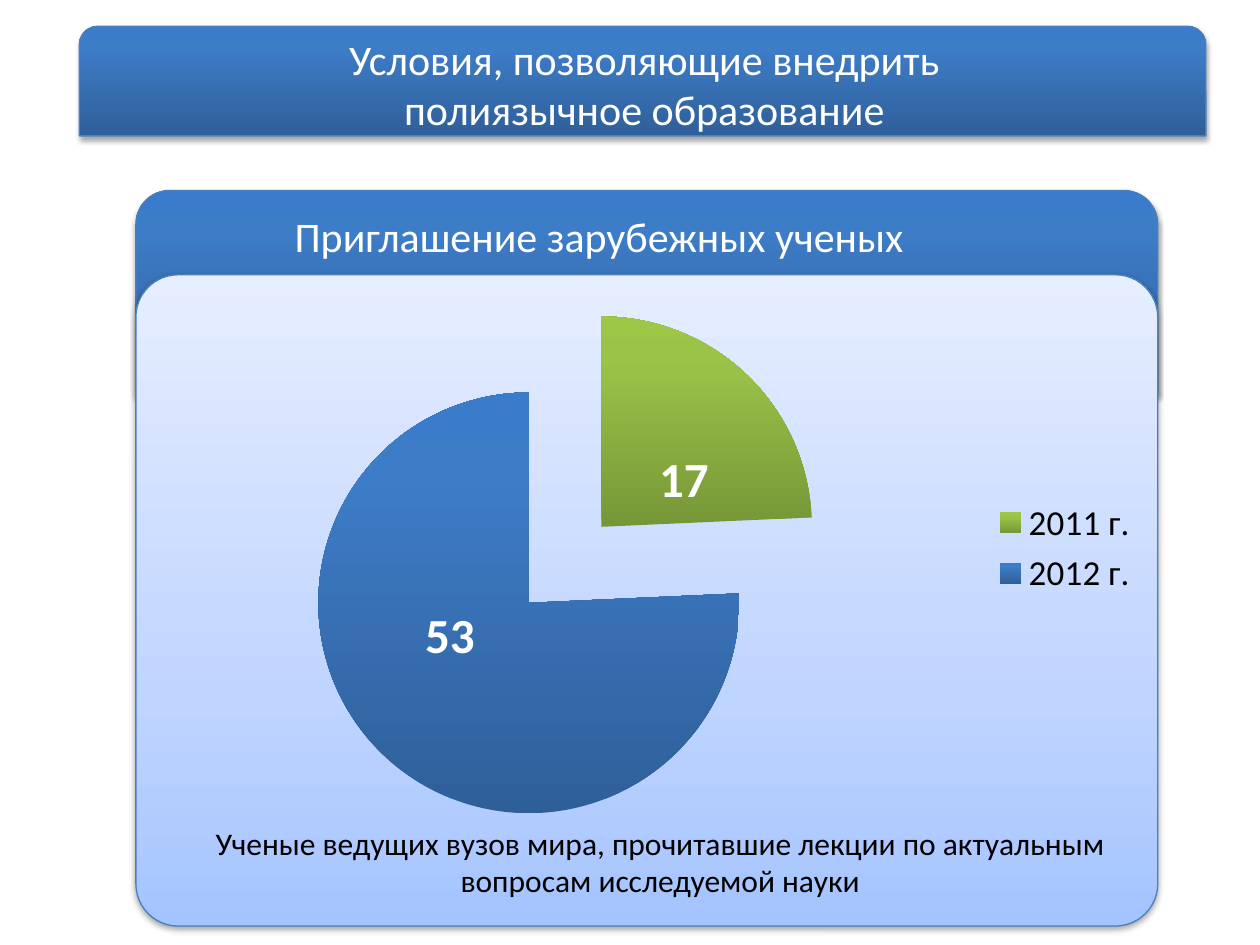
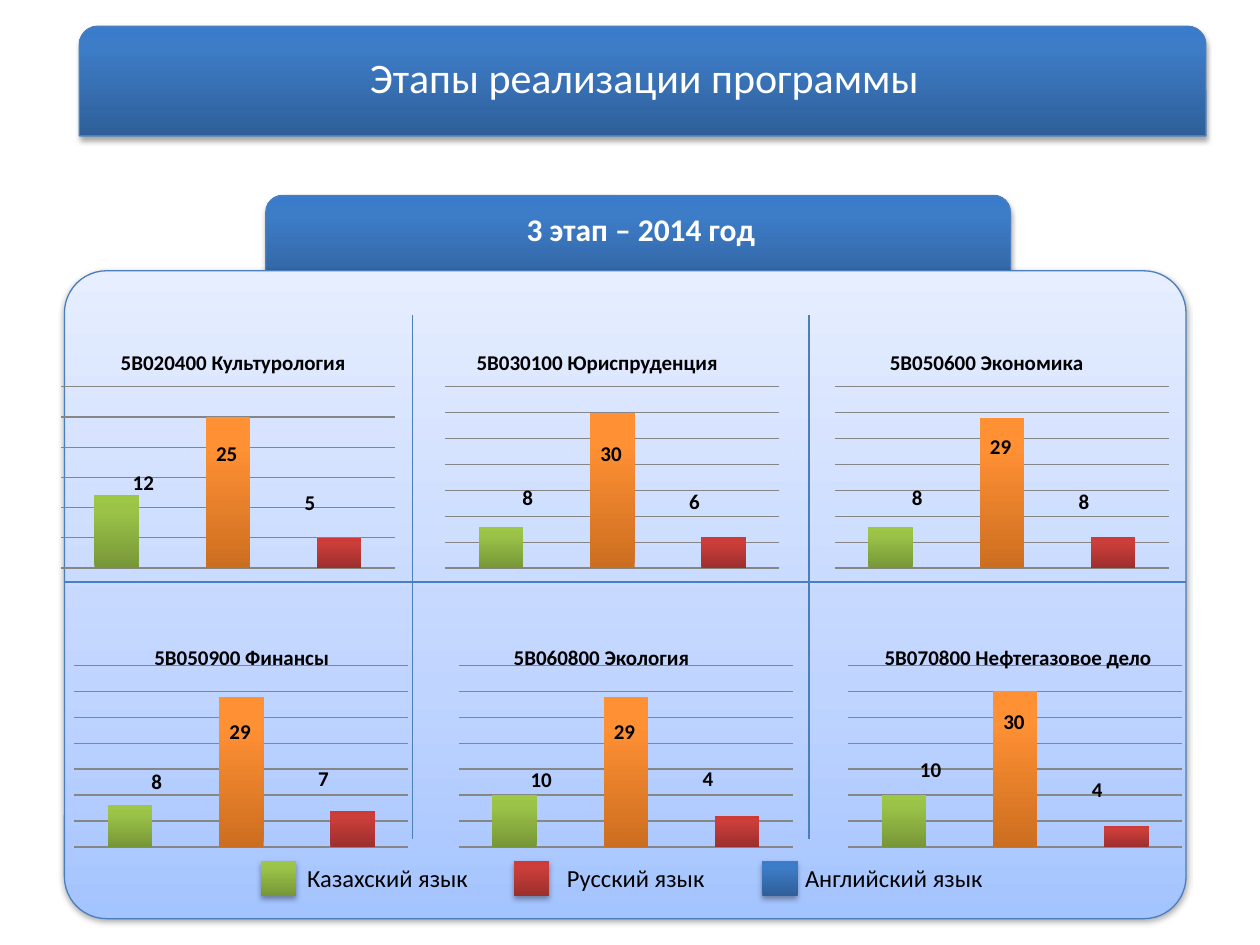
import lxml.etree
import pptx
import pptx.chart.data
import pptx.dml.color
import pptx.enum.chart
import pptx.enum.shapes
import pptx.enum.text
import pptx.oxml.ns
import pptx.util

Cm, Pt = pptx.util.Cm, pptx.util.Pt
RGB = pptx.dml.color.RGBColor
qn = pptx.oxml.ns.qn
SHAPE = pptx.enum.shapes.MSO_SHAPE
KIND = pptx.enum.chart.XL_CHART_TYPE
LEFT = pptx.enum.text.PP_ALIGN.LEFT
MID = pptx.enum.text.PP_ALIGN.CENTER

FONT = "Calibri"
WHITE = RGB(0xFF, 0xFF, 0xFF)
BLACK = RGB(0, 0, 0)
EDGE = RGB(0x4B, 0x7E, 0xBC)
GRID = RGB(0x86, 0x86, 0x86)


def ramp(low, mid, high, turn=80):
    """Return gradient stops from bottom to top."""
    return [(0, RGB.from_string(low)), (turn, RGB.from_string(mid)),
            (100, RGB.from_string(high))]


BLUE = ramp("2F5F99", "3D7CC7", "3A7CCB")
GREEN = ramp("779737", "9BC348", "9DC746")
RED = ramp("9C2F2D", "CB3E3A", "CE3B37")
AMBER = ramp("CC6E20", "FF9034", "FF9136")
PALE = ramp("A4C4FF", "BFD4FF", "E6EEFF", 35)


def add(root, tag, **attrs):
    """Append an XML child with attributes."""
    node = lxml.etree.SubElement(root, qn(tag))
    for key, val in attrs.items():
        node.set(key, str(val))
    return node


def paint(fill, root, stops):
    """Give the newest fill under root a vertical gradient."""
    fill.gradient()
    fill.gradient_angle = 90
    grad = list(root.iter(qn("a:gradFill")))[-1]
    group = grad.find(qn("a:gsLst"))
    for old in list(group):
        group.remove(old)
    for pos, color in stops:
        stop = add(group, "a:gs", pos=pos * 1000)
        add(stop, "a:srgbClr", val=color)


def block(slide, kind, box, stops, edge=True, round_by=None):
    """Draw a shaded shape with a soft shadow."""
    shape = slide.shapes.add_shape(kind, *map(Cm, box))
    if round_by:
        shape.adjustments[0] = round_by
    paint(shape.fill, shape._element, stops)
    if edge:
        shape.line.color.rgb = EDGE
        shape.line.width = Pt(0.75)
    else:
        shape.line.fill.background()
    shape.shadow.inherit = False
    glow = add(shape._element.spPr.find(qn("a:effectLst")), "a:outerShdw",
               blurRad=Pt(3.1), dist=Pt(1.8), dir=5400000, rotWithShape=0)
    add(add(glow, "a:srgbClr", val=BLACK), "a:alpha", val=35000)


def label(slide, box, text, size, color=BLACK, bold=False, align=MID, wrap=True):
    """Write text in a box, one paragraph a line."""
    frame = slide.shapes.add_textbox(*map(Cm, box)).text_frame
    frame.text = text
    frame.word_wrap = wrap
    for para in frame.paragraphs:
        para.alignment = align
        font = para.font
        font.name, font.size, font.bold = FONT, Pt(size), bold
        font.color.rgb = color
    return frame


def banner(slide, text, tall):
    """Draw the slide title on its band."""
    x, y, w, h = 1.6, 0.53, 22.71, 2.21
    block(slide, SHAPE.ROUND_2_SAME_RECTANGLE, (x, y, w, h), BLUE)
    frame = label(slide, (x + 1.19, y, w - 2.31, tall), text, 24, WHITE)
    frame.vertical_anchor = pptx.enum.text.MSO_ANCHOR.MIDDLE


def panel(slide, kind, head, body):
    """Draw a tab with a pale card over its lower edge."""
    block(slide, kind, head, BLUE)
    block(slide, SHAPE.ROUNDED_RECTANGLE, body, PALE, round_by=0.065)


def graph(slide, kind, box, names, vals, fills):
    """Add a clear chart with one shaded point per value."""
    data = pptx.chart.data.CategoryChartData()
    data.categories = names
    data.add_series("Series 1", vals)
    chart = slide.shapes.add_chart(kind, *map(Cm, box), data).chart
    chart.has_title = chart.has_legend = False
    chart.font.name, chart.font.size = FONT, Pt(18)
    chart.font.color.rgb = BLACK
    back = lxml.etree.Element(qn("c:spPr"))
    add(back, "a:noFill")
    add(add(back, "a:ln"), "a:noFill")
    chart._chartSpace.find(qn("c:chart")).addnext(back)
    plot = chart.plots[0]
    plot.vary_by_categories = False
    row = plot.series[0]
    for num, stops in enumerate(fills):
        paint(row.points[num].format.fill, row._element, stops)
    return chart


def pie(slide, box):
    """Draw the exploded pie with its legend and numbers."""
    x, y, w, h = box
    chart = graph(slide, KIND.PIE, box, ("2011 г.", "2012 г."), (17, 53),
                  (GREEN, BLUE))
    chart.has_legend = True
    chart.legend.position = pptx.enum.chart.XL_LEGEND_POSITION.RIGHT
    chart.legend.include_in_layout = False
    chart.legend.font.size = Pt(20)
    boom = lxml.etree.Element(qn("c:explosion"))
    boom.set("val", "25")
    chart.plots[0].series[0]._element.find(qn("c:tx")).addnext(boom)
    area = chart._chartSpace.find(".//" + qn("c:plotArea"))
    for old in area.findall(qn("c:layout")):
        area.remove(old)
    frame = lxml.etree.Element(qn("c:layout"))
    area.insert(0, frame)
    spot = add(frame, "c:manualLayout")
    add(spot, "c:layoutTarget", val="inner")
    add(spot, "c:xMode", val="edge")
    add(spot, "c:yMode", val="edge")
    for key, val in zip("xywh", (0.13, 0.06, 0.54, 0.94)):
        add(spot, "c:" + key, val=val)
    for text, dx, dy in (("17", 9.52, 3.51), ("53", 4.8, 6.66)):
        label(slide, (x + dx, y + dy, 1.52, 1.45), text, 28, WHITE, True, wrap=False)


def bars(slide, x, y, title, place, vals, marks, rises):
    """Draw one small bar chart with title and value labels."""
    chart = graph(slide, KIND.COLUMN_CLUSTERED, (x, y, 7.01, 3.81), "123", vals,
                  (GREEN, AMBER, RED))
    chart.plots[0].gap_width = 150
    chart.category_axis.visible = False
    axis = chart.value_axis
    axis.minimum_scale, axis.major_unit = 0, 5
    axis.maximum_scale = max(vals) // 5 * 5 + 5 if max(vals) != 29 else 35
    axis.has_major_gridlines = True
    axis.major_gridlines.format.line.color.rgb = GRID
    axis.major_gridlines.format.line.width = Pt(0.75)
    axis.visible = False
    dx, dy, wide = place
    label(slide, (x + dx, y + dy, wide, 0.76), title, 12, bold=True)
    for num, (mark, rise) in enumerate(zip(marks, rises)):
        label(slide, (x + 1.14 + 1.68 * num, y + rise, 1.32, 0.76), str(mark), 12,
              bold=True)


def rules(slide, box):
    """Split the card into six cells with thin lines."""
    x, y, w, h = box
    ends = [(x, y + 6.27, x + w, y + 6.27)]
    ends += [(x + dx, y + 0.89, x + dx, y + 11.46) for dx in (7.01, 15.01)]
    for end in ends:
        line = slide.shapes.add_connector(
            pptx.enum.shapes.MSO_CONNECTOR.STRAIGHT, *map(Cm, end))
        line.line.color.rgb = EDGE
        line.line.width = Pt(0.75)
        add(line._element.spPr, "a:effectLst")


def key(slide, x, y):
    """Draw the colour key of the languages."""
    for text, stops, dx, gap, wide in (
            ("Казахский язык", GREEN, 0, 0.68, 3.78),
            ("Русский язык", RED, 5.1, 0.82, 3.3),
            ("Английский язык", BLUE, 10.11, 0.61, 4.11)):
        block(slide, SHAPE.RECTANGLE, (x + dx, y, 0.71, 0.71), stops, edge=False)
        label(slide, (x + dx + gap, y - 0.08, wide, 0.86), text, 14, align=LEFT,
              wrap=False)


def guests(slide):
    """Build the slide on invited scholars."""
    banner(slide, "Условия, позволяющие внедрить\nполиязычное образование", 2.31)
    x, y, w = 2.74, 3.84, 20.6
    panel(slide, SHAPE.ROUND_2_SAME_RECTANGLE, (x, y, w, 4.09),
          (x, y + 1.7, w, 13.13))
    label(slide, (x + 2.95, y + 0.27, 15.6, 1.27), "Приглашение зарубежных ученых",
          24, WHITE, align=LEFT)
    pie(slide, (x + 0.77, y + 1.57, 19.71, 11.28))
    label(slide, (x + 0.97, y + 12.64, 19.2, 1.8),
          "Ученые ведущих вузов мира, прочитавшие лекции по актуальным "
          "вопросам исследуемой науки", 18)


def stages(slide):
    """Build the slide on the third stage."""
    banner(slide, "Этапы реализации программы", 2.03)
    card = (1.3, 5.46, 22.61, 13.06)
    panel(slide, SHAPE.ROUNDED_RECTANGLE, (5.36, 3.94, 15.01, 2.03), card)
    label(slide, (10.34, 4.11, 5.16, 1.02), "3 этап – 2014 год", 18, WHITE, True,
          wrap=False)
    key(slide, 5.26, 17.35)
    rules(slide, card)
    rows = (
        (7.72, 0, -0.79, 6.4, (
            ("5B020400 Культурология", 0.41, (12, 25, 5), (12, 25, 5),
             (1.63, 1.04, 2.03)),
            ("5B030100 Юриспруденция", 0, (8, 30, 6), (8, 30, 6),
             (1.93, 1.04, 2.01)),
            ("5B050600 Экономика", 0, (8, 29, 6), (8, 29, 8),
             (1.93, 0.89, 2.01)))),
        (13.34, 0.27, -0.48, 7.19, (
            ("5B050900 Финансы", -0.08, (8, 29, 7), (8, 29, 7),
             (2.03, 1.02, 1.96)),
            ("5B060800 Экология", -0.58, (10, 29, 6), (10, 29, 4),
             (1.98, 1.02, 1.96)),
            ("5B070800 Нефтегазовое дело", -0.03, (10, 30, 4), (10, 30, 4),
             (1.78, 0.81, 2.18)))))
    for y, shift, dy, wide, cells in rows:
        for x, (title, dx, vals, marks, rises) in zip((1.09, 8.84, 16.69), cells):
            bars(slide, x + shift, y, title, (dx, dy, wide), vals, marks, rises)


def main():
    """Build and save the slides."""
    deck = pptx.Presentation()
    deck.slide_width, deck.slide_height = Cm(25.4), Cm(19.05)
    for build in (guests, stages):
        build(deck.slides.add_slide(deck.slide_layouts[6]))
    deck.save("out.pptx")


if __name__ == "__main__":
    main()
